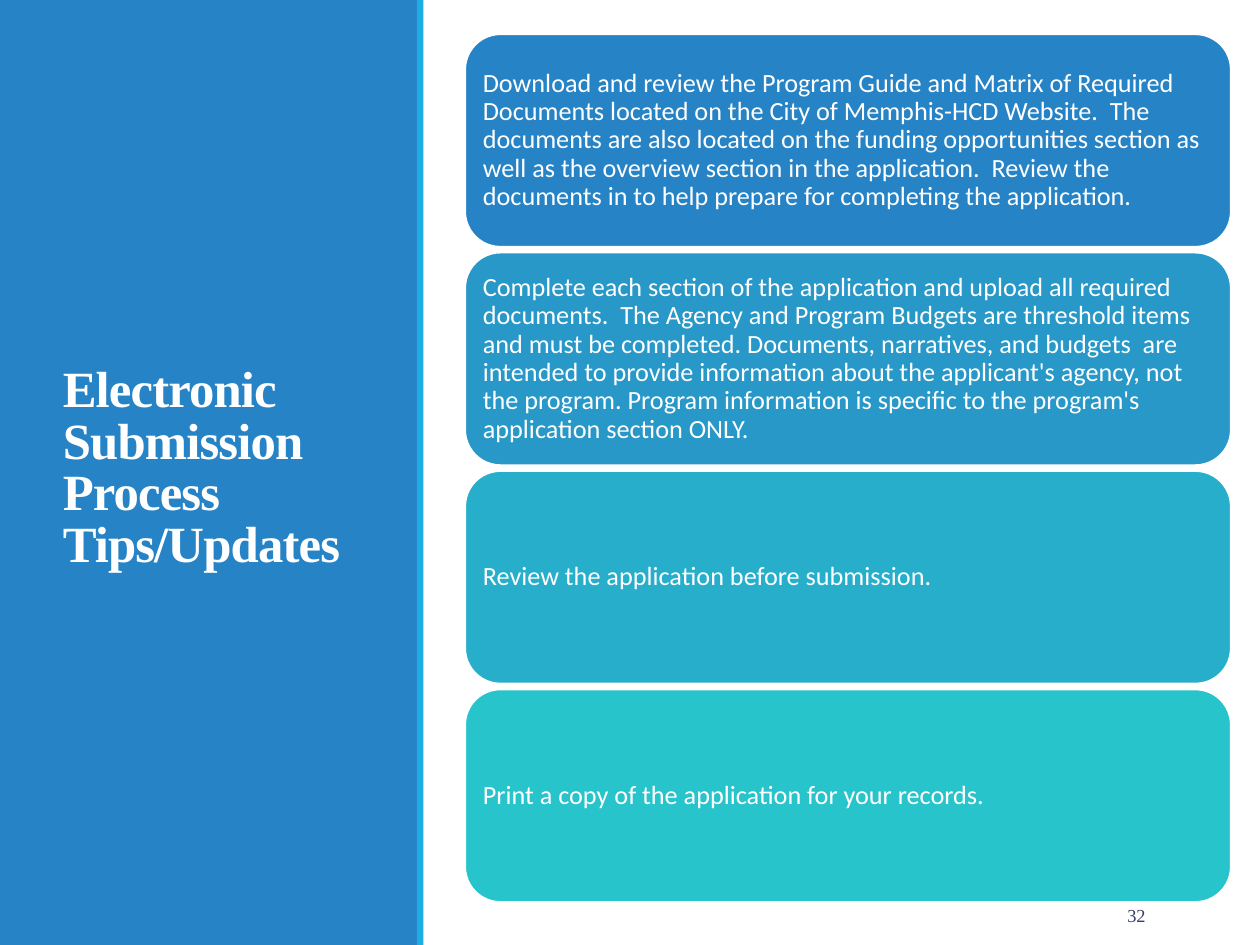
from pptx import Presentation
from pptx.dml.color import RGBColor
from pptx.enum.shapes import MSO_SHAPE
from pptx.enum.text import MSO_ANCHOR, PP_ALIGN
from pptx.util import Inches, Pt

RECT, ROUND = MSO_SHAPE.RECTANGLE, MSO_SHAPE.ROUNDED_RECTANGLE
MIDDLE = MSO_ANCHOR.MIDDLE
LEFT, RIGHT = PP_ALIGN.LEFT, PP_ALIGN.RIGHT

# Content
TITLE = "Electronic Submission Process Tips/Updates"
NUMBER = "32"
STEPS = [
    ("2683C6", "Download and review the Program Guide and Matrix of Required "
     "Documents located on the City of Memphis-HCD Website.  The documents are "
     "also located on the funding opportunities section as well as the overview "
     "section in the application.  Review the documents in to help prepare for "
     "completing the application."),
    ("2798C8", "Complete each section of the application and upload all required "
     "documents.  The Agency and Program Budgets are threshold items and must be "
     "completed. Documents, narratives, and budgets  are intended to provide "
     "information about the applicant's agency, not the program. Program "
     "information is specific to the program's application section ONLY."),
    ("27AECA", "Review the application before submission."),
    ("28C4CC", "Print a copy of the application for your records."),
]

THEME = {
    "panel": "2683C6", "accent": "1CADE4", "white": "FFFFFF", "number": "344068",
    "head": "Times New Roman", "body": "Calibri",
    "title_size": 29, "step_size": 15, "number_size": 10.5,
}

# Layout in inches
WIDE, HIGH = 10, 7.5
CARD_X, CARD_Y, CARD_W, CARD_H = 3.69, 0.27, 6.08, 1.69
PITCH = (5.47 - CARD_Y) / (len(STEPS) - 1)
INSET = 0.06


def add_block(slide, kind, box, fill, edge=None):
    shape = slide.shapes.add_shape(kind, *map(Inches, box))
    shape.shadow.inherit = False
    shape.fill.solid()
    shape.fill.fore_color.rgb = RGBColor.from_string(fill)
    if edge:
        shape.line.color.rgb = RGBColor.from_string(edge)
        shape.line.width = Pt(1.25)
    else:
        shape.line.fill.background()
    return shape


def set_text(shape, text, font, size, color, bold=False, align=LEFT, lines=1.0):
    frame = shape.text_frame
    frame.word_wrap = True
    frame.vertical_anchor = MIDDLE
    frame.text = text
    para = frame.paragraphs[0]
    para.alignment = align
    para.line_spacing = lines
    run = para.runs[0]
    run.font.name = font
    run.font.size = Pt(size)
    run.font.bold = bold
    run.font.color.rgb = RGBColor.from_string(color)
    return run


def main():
    deck = Presentation()
    deck.slide_width, deck.slide_height = Inches(WIDE), Inches(HIGH)
    slide = deck.slides.add_slide(deck.slide_layouts[6])

    # Side panel with its title
    add_block(slide, RECT, (0, 0, 3.32, HIGH), THEME["panel"])
    title = slide.shapes.add_textbox(*map(Inches, (0.4, 0.57, 2.53, 6.31)))
    run = set_text(title, TITLE, THEME["head"], THEME["title_size"],
                   THEME["white"], bold=True, lines=0.85)
    run._r.get_or_add_rPr().set("spc", "-50")
    add_block(slide, RECT, (3.31, 0, 0.05, HIGH), THEME["accent"])

    # Slide number
    number = slide.shapes.add_textbox(*map(Inches, (8.3, 7.06, 0.89, 0.4)))
    set_text(number, NUMBER, THEME["head"], THEME["number_size"],
             THEME["number"], align=RIGHT)

    # Stack of step cards
    for i, (fill, text) in enumerate(STEPS):
        box = (CARD_X, CARD_Y + i * PITCH, CARD_W, CARD_H)
        card = add_block(slide, ROUND, box, fill, THEME["white"])
        frame = card.text_frame
        frame.margin_left = frame.margin_right = Inches(INSET)
        frame.margin_top = frame.margin_bottom = Inches(INSET)
        set_text(card, text, THEME["body"], THEME["step_size"],
                 THEME["white"], lines=0.9)

    deck.save("out.pptx")


if __name__ == "__main__":
    main()
